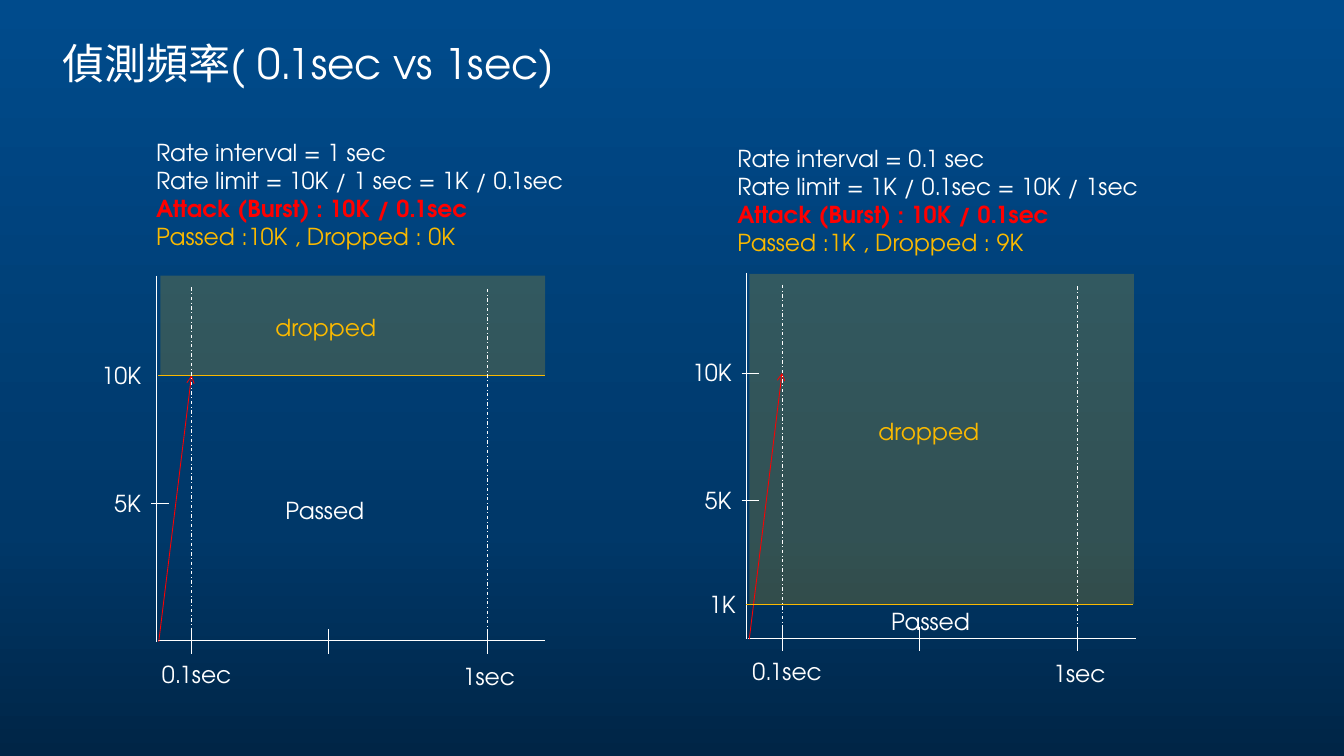
from copy import deepcopy

from lxml import etree
from pptx import Presentation
from pptx.dml.color import RGBColor
from pptx.enum.dml import MSO_LINE_DASH_STYLE as Dash
from pptx.enum.shapes import MSO_CONNECTOR as Connector, MSO_SHAPE as Shape
from pptx.enum.text import MSO_ANCHOR as Anchor, MSO_AUTO_SIZE as AutoSize, PP_ALIGN as Align
from pptx.oxml.ns import qn
from pptx.util import Inches, Pt

FONT = "TeX Gyre Adventor"
WHITE = RGBColor(0xFF, 0xFF, 0xFF)
RED = RGBColor(0xFF, 0x00, 0x00)
AMBER = RGBColor(0xFA, 0xB9, 0x00)
BACKGROUND = [
    (0, RGBColor(0x00, 0x4B, 0x8C)),
    (0.7, RGBColor(0x00, 0x38, 0x69)),
    (1, RGBColor(0x00, 0x25, 0x46)),
]

TITLE = "偵測頻率( 0.1sec vs 1sec)"
LINE_STYLES = [(WHITE, False), (WHITE, False), (RED, True), (AMBER, False)]
LABEL_WIDTHS = {"10K": 0.68, "5K": 0.52, "1K": 0.52, "0.1sec": 1.06,
                "1sec": 0.83, "Passed": 1.15, "dropped": 1.42}
LABEL_HEIGHT = 0.44
AXIS_LABELS = [("10K", 1.11, 4.25), ("5K", 1.26, 5.77),
               ("0.1sec", 1.83, 7.81), ("1sec", 5.41, 7.83)]
TIME_TICKS = [2.28, 3.91, 5.8]
TIME_GUIDES = [(2.28, 3.42, 7.72), (5.8, 3.44, 7.73)]

PANELS = [
    {
        "shift": (0, 0),
        "summary": ["Rate interval = 1 sec",
                    "Rate limit = 10K / 1 sec = 1K / 0.1sec",
                    "Attack (Burst) : 10K / 0.1sec",
                    "Passed :10K , Dropped : 0K"],
        "summary_box": (1.76, 1.6, 6.36, 1.78),
        "dropped_area": (1.91, 3.28, 4.58, 1.19),
        "limit": (1.88, 4.47),
        "rate_ticks": [5.99],
        "labels": [("Passed", 3.3, 5.86, WHITE), ("dropped", 3.18, 3.68, AMBER)],
    },
    {
        "shift": (7.03, -0.03),
        "summary": ["Rate interval = 0.1 sec",
                    "Rate limit = 1K / 0.1sec = 10K / 1sec",
                    "Attack (Burst) : 10K / 0.1sec",
                    "Passed :1K , Dropped : 9K"],
        "summary_box": (8.68, 1.67, 5.1, 1.45),
        "dropped_area": (8.92, 3.26, 4.58, 3.93),
        "limit": (8.88, 7.2),
        "rate_ticks": [4.47, 5.99],
        "labels": [("Passed", 10.51, 7.18, WHITE), ("dropped", 10.36, 4.92, AMBER),
                   ("1K", 8.34, 6.98, WHITE)],
    },
]


def add_run(paragraph, text, size, color, bold=False):
    run = paragraph.add_run()
    run.text = text
    run.font.name = FONT
    run.font.size = Pt(size)
    run.font.bold = bold
    run.font.color.rgb = color


def add_line(shapes, start, end, color=WHITE, dash=None, arrow=False):
    points = [Inches(value) for value in (*start, *end)]
    line = shapes.add_connector(Connector.STRAIGHT, *points)
    line.line.color.rgb = color
    line.line.width = Pt(0.75)
    if dash:
        line.line.dash_style = dash
    if arrow:
        etree.SubElement(line.line._get_or_add_ln(), qn("a:tailEnd"), type="arrow")
    etree.SubElement(line._element.spPr, qn("a:effectLst"))


def add_label(shapes, text, left, top, color=WHITE):
    box = (left, top, LABEL_WIDTHS[text], LABEL_HEIGHT)
    label = shapes.add_textbox(*map(Inches, box))
    label.text_frame.word_wrap = False
    label.text_frame.auto_size = AutoSize.SHAPE_TO_FIT_TEXT
    add_run(label.text_frame.paragraphs[0], text, 20, color)


def add_summary(slide, panel):
    summary = slide.shapes.add_textbox(*map(Inches, panel["summary_box"]))
    frame = summary.text_frame
    frame.word_wrap = True
    frame.auto_size = AutoSize.SHAPE_TO_FIT_TEXT
    for index, (text, style) in enumerate(zip(panel["summary"], LINE_STYLES)):
        paragraph = frame.add_paragraph() if index else frame.paragraphs[0]
        add_run(paragraph, text, 20, *style)


def add_diagram(slide, panel):
    shapes = slide.shapes.add_group_shape().shapes
    shift_x, shift_y = panel["shift"]

    def place(x, y):
        return x + shift_x, y + shift_y

    area = shapes.add_shape(Shape.RECTANGLE, *map(Inches, panel["dropped_area"]))
    area.shadow.inherit = False
    area.line.fill.background()
    area.fill.solid()
    area.fill.fore_color.rgb = AMBER
    color = area._element.spPr.find(qn("a:solidFill"))[0]
    etree.SubElement(color, qn("a:alpha"), val="20000")

    add_line(shapes, place(1.86, 3.28), place(1.86, 7.64))
    add_line(shapes, place(6.49, 7.63), place(1.88, 7.63))
    add_line(shapes, place(1.89, 7.64), place(2.28, 4.47), RED, arrow=True)
    limit_x, limit_y = panel["limit"]
    add_line(shapes, (limit_x, limit_y), (limit_x + 4.61, limit_y), AMBER)
    for x, top, bottom in TIME_GUIDES:
        add_line(shapes, place(x, top), place(x, bottom), dash=Dash.DASH_DOT)
    for x in TIME_TICKS:
        add_line(shapes, place(x, 7.49), place(x, 7.78))
    for y in panel["rate_ticks"]:
        add_line(shapes, place(1.8, y), place(2.01, y))
    for text, x, y in AXIS_LABELS:
        add_label(shapes, text, *place(x, y))
    for text, x, y, color in panel["labels"]:
        add_label(shapes, text, x, y, color)


def set_background(slide):
    fill = slide.background.fill
    fill.gradient()
    fill.gradient_angle = 270
    first = fill.gradient_stops[0]._gs
    first.addnext(deepcopy(first))
    for stop, (position, color) in zip(fill.gradient_stops, BACKGROUND):
        stop.position = position
        stop.color.rgb = color


def set_title(slide):
    title = slide.shapes.title
    title.left, title.top, title.width, title.height = map(Inches, (0.74, 0.26, 14.68, 0.8))
    frame = title.text_frame
    frame.margin_left = frame.margin_right = frame.margin_top = frame.margin_bottom = 0
    frame.vertical_anchor = Anchor.BOTTOM
    frame.auto_size = AutoSize.NONE
    paragraph = frame.paragraphs[0]
    paragraph.alignment = Align.LEFT
    paragraph.line_spacing = 0.95
    paragraph.space_after = Pt(2)
    add_run(paragraph, TITLE, 36, WHITE)


def main():
    presentation = Presentation()
    presentation.slide_width = Inches(16)
    presentation.slide_height = Inches(9)
    slide = presentation.slides.add_slide(presentation.slide_layouts[5])
    set_background(slide)
    set_title(slide)
    for panel in PANELS:
        add_summary(slide, panel)
        add_diagram(slide, panel)
    presentation.save("out.pptx")


if __name__ == "__main__":
    main()
